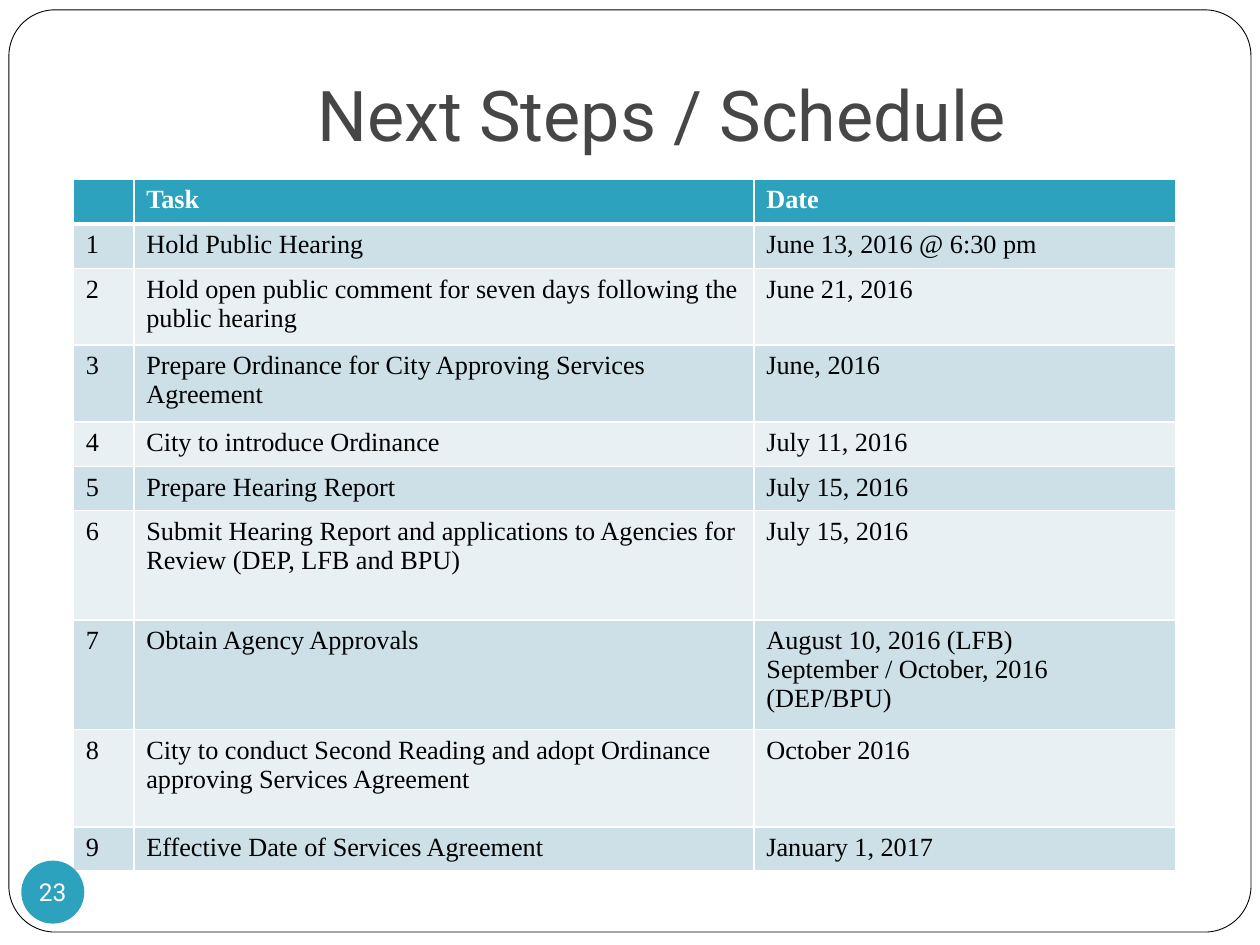
import lxml.etree
import pptx
import pptx.dml.color
import pptx.enum.shapes
import pptx.enum.text
import pptx.oxml.ns
import pptx.util

ACCENT = "2DA2BF"
WHITE = "FFFFFF"
BLACK = "000000"
BANDS = ("E8F0F4", "CDE0E8")
COLUMN_WIDTHS = (1.22, 12.5, 8.5)
SCHEDULE = (
    (0.89, "", "Task", "Date"),
    (0.89, "1", "Hold Public Hearing", "June 13, 2016 @ 6:30 pm"),
    (1.55, "2", "Hold open public comment for seven days following the public hearing", "June 21, 2016"),
    (1.55, "3", "Prepare Ordinance for City Approving Services Agreement", "June, 2016"),
    (0.89, "4", "City to introduce Ordinance", "July 11, 2016"),
    (0.89, "5", "Prepare Hearing Report", "July 15, 2016"),
    (2.21, "6", "Submit Hearing Report and applications to Agencies for Review (DEP, LFB and BPU)", "July 15, 2016"),
    (2.21, "7", "Obtain Agency Approvals", "August 10, 2016 (LFB)\nSeptember / October, 2016 (DEP/BPU)"),
    (1.96, "8", "City to conduct Second Reading and adopt Ordinance approving Services Agreement", "October 2016"),
    (0.89, "9", "Effective Date of Services Agreement", "January 1, 2017"),
)


def set_color(color_format, value):
    """Give a fill foreground, line or font colour a hex value."""
    color_format.rgb = pptx.dml.color.RGBColor.from_string(value)


def set_fill(target, value):
    """Fill a shape or cell with one solid colour."""
    target.fill.solid()
    set_color(target.fill.fore_color, value)


def to_lengths(box):
    """Turn a box in centimetres into lengths."""
    return [pptx.util.Cm(value) for value in box]


def format_text(text_frame, font_name, size, color, bold=False, alignment=None):
    """Format every run of a text frame alike."""
    for paragraph in text_frame.paragraphs:
        paragraph.alignment = alignment
        for run in paragraph.runs:
            run.font.name = font_name
            run.font.size = pptx.util.Pt(size)
            run.font.bold = bold
            set_color(run.font.color, color)


def set_margins(text_frame, left, top, right, bottom):
    """Set the four insets of a text frame in centimetres."""
    text_frame.margin_left, text_frame.margin_top = pptx.util.Cm(left), pptx.util.Cm(top)
    text_frame.margin_right, text_frame.margin_bottom = pptx.util.Cm(right), pptx.util.Cm(bottom)


def add_frame(slide, box):
    """Place the rounded page frame behind everything else."""
    frame = slide.shapes.add_shape(pptx.enum.shapes.MSO_SHAPE.ROUNDED_RECTANGLE, *to_lengths(box))
    frame.adjustments[0] = 0.05
    frame.shadow.inherit = False
    set_fill(frame, WHITE)
    set_color(frame.line.color, BLACK)
    frame.line.width = pptx.util.Pt(0.5)
    slide.shapes.title.element.addprevious(frame.element)


def fill_title(slide, box, text):
    """Move, fill and format the title placeholder."""
    title = slide.shapes.title
    title.left, title.top, title.width, title.height = to_lengths(box)
    text_frame = title.text_frame
    text_frame.text = text
    text_frame.auto_size = pptx.enum.text.MSO_AUTO_SIZE.NONE
    text_frame.vertical_anchor = pptx.enum.text.MSO_ANCHOR.BOTTOM
    set_margins(text_frame, 0.25, 0.13, 0.25, 0.25)
    format_text(text_frame, "Roboto", 40, "464646", alignment=pptx.enum.text.PP_ALIGN.CENTER)


def set_borders(cell, bottom_width):
    """Draw white cell borders, with a chosen bottom width in points."""
    properties = cell._tc.get_or_add_tcPr()
    widths = {"a:lnL": 1, "a:lnR": 1, "a:lnT": 1, "a:lnB": bottom_width}
    for position, (tag, width) in enumerate(widths.items()):
        line = lxml.etree.Element(pptx.oxml.ns.qn(tag), w=str(pptx.util.Pt(width)))
        fill = lxml.etree.SubElement(line, pptx.oxml.ns.qn("a:solidFill"))
        lxml.etree.SubElement(fill, pptx.oxml.ns.qn("a:srgbClr"), val=WHITE)
        properties.insert(position, line)


def fill_cell(cell, text, row_number):
    """Write and format one schedule cell."""
    is_header = row_number == 0
    text_frame = cell.text_frame
    text_frame.text = text
    set_margins(cell, 0.25, 0.13, 0.25, 0.13)
    format_text(text_frame, "Times New Roman", 15, WHITE if is_header else BLACK, bold=is_header)
    if not text:
        paragraph = text_frame.paragraphs[0]
        lxml.etree.SubElement(paragraph._p, pptx.oxml.ns.qn("a:endParaRPr"), sz="1500")
    set_fill(cell, ACCENT if is_header else BANDS[row_number % 2])
    set_borders(cell, 3 if is_header else 1)


def add_schedule(slide, left, top):
    """Place the schedule table from its top left corner."""
    box = (left, top, sum(COLUMN_WIDTHS), sum(row[0] for row in SCHEDULE))
    shape = slide.shapes.add_table(len(SCHEDULE), len(COLUMN_WIDTHS), *to_lengths(box))
    table = shape.table
    for column, width in zip(table.columns, COLUMN_WIDTHS):
        column.width = pptx.util.Cm(width)
    for row_number, (height, *texts) in enumerate(SCHEDULE):
        table.rows[row_number].height = pptx.util.Cm(height)
        for column_number, text in enumerate(texts):
            fill_cell(table.cell(row_number, column_number), text, row_number)


def add_page_badge(slide, box, number):
    """Place the round page number badge."""
    badge = slide.shapes.add_shape(pptx.enum.shapes.MSO_SHAPE.OVAL, *to_lengths(box))
    badge.shadow.inherit = False
    set_fill(badge, ACCENT)
    badge.line.fill.background()
    text_frame = badge.text_frame
    text_frame.text = number
    text_frame.word_wrap = False
    text_frame.vertical_anchor = pptx.enum.text.MSO_ANCHOR.MIDDLE
    set_margins(text_frame, 0, 0, 0, 0)
    format_text(text_frame, "Roboto", 14, WHITE, alignment=pptx.enum.text.PP_ALIGN.CENTER)


def main():
    """Build and save the schedule slide."""
    presentation = pptx.Presentation()
    presentation.slide_width = pptx.util.Cm(25.4)
    presentation.slide_height = pptx.util.Cm(19.05)
    slide = presentation.slides.add_slide(presentation.slide_layouts[5])
    add_frame(slide, (0.18, 0.2, 25.04, 18.59))
    fill_title(slide, (2.54, 0.2, 21.59, 3.18), "Next Steps / Schedule")
    add_schedule(slide, 1.48, 3.61)
    add_page_badge(slide, (0.43, 17.35, 1.27, 1.27), "23")
    presentation.save("out.pptx")


if __name__ == "__main__":
    main()
